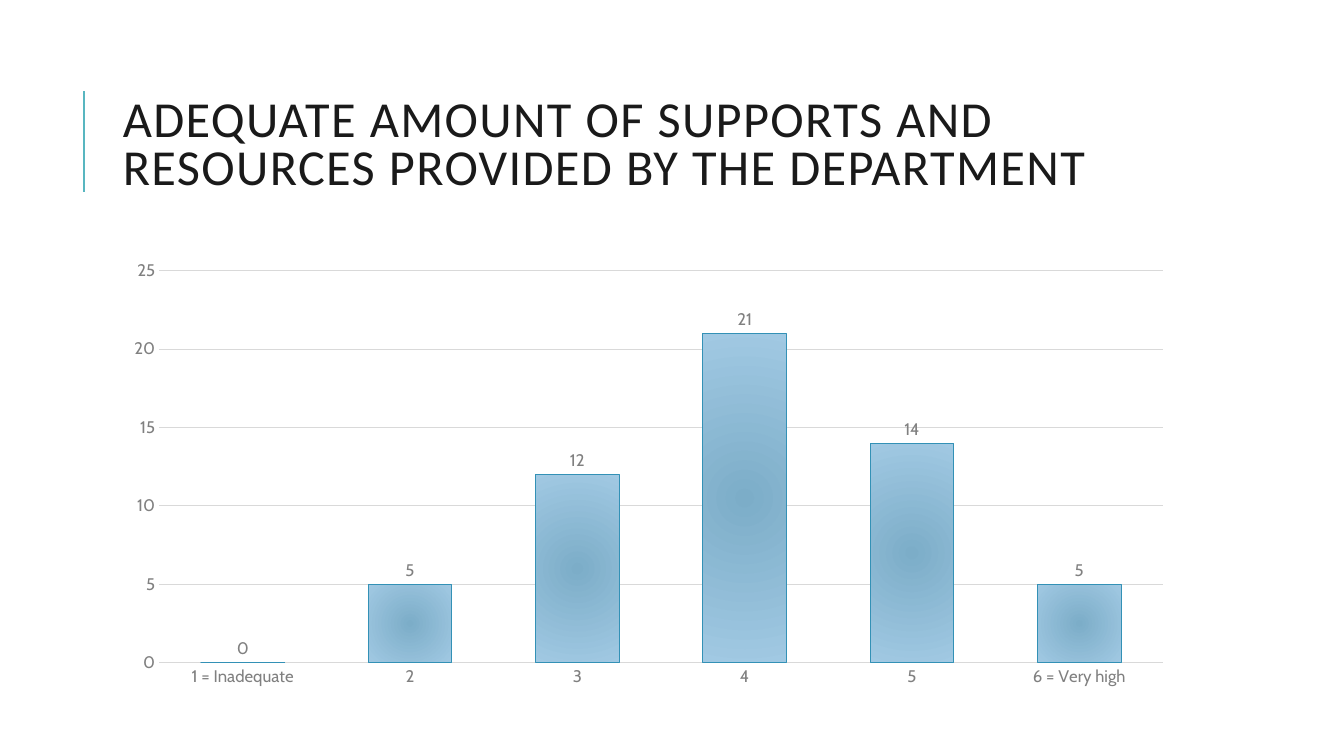
"""Build a slide with a column chart of ratings for departmental support."""
from lxml.etree import SubElement
from pptx import Presentation
from pptx.chart.data import CategoryChartData
from pptx.dml.color import RGBColor
from pptx.enum.chart import XL_CHART_TYPE, XL_LABEL_POSITION, XL_TICK_MARK
from pptx.enum.shapes import MSO_CONNECTOR
from pptx.enum.text import MSO_ANCHOR, PP_ALIGN
from pptx.oxml import parse_xml
from pptx.oxml.ns import nsdecls, qn
from pptx.util import Pt


def color(hex_code):
    return RGBColor.from_string(hex_code)


def style(target, values):
    for name, value in values.items():
        setattr(target, name, value)


presentation = Presentation()
style(presentation, {"slide_width": Pt(960), "slide_height": Pt(540)})
slide = presentation.slides.add_slide(presentation.slide_layouts[6])

accent_line = slide.shapes.add_connector(
    MSO_CONNECTOR.STRAIGHT, Pt(60), Pt(136.8), Pt(60), Pt(64.8)
)
accent_line.line.color.rgb = color("58B6C0")
accent_line.line.width = Pt(1.5)
SubElement(accent_line._element.spPr, qn("a:effectLst"))

title = slide.shapes.add_textbox(Pt(80.64), Pt(46.08), Pt(765.36), Pt(118.08))
style(title.text_frame, {"word_wrap": True, "vertical_anchor": MSO_ANCHOR.MIDDLE})
paragraph = title.text_frame.paragraphs[0]
style(paragraph, {"line_spacing": 0.8, "alignment": PP_ALIGN.LEFT})
run = paragraph.add_run()
run.text = "ADEQUATE AMOUNT OF SUPPORTS AND RESOURCES PROVIDED BY THE DEPARTMENT"
style(run.font, {"name": "Calibri", "size": Pt(36)})
run.font.color.rgb = color("1A1A1A")
run.font._element.set("spc", "100")

chart_data = CategoryChartData(number_format="General")
chart_data.categories = ["1 = Inadequate", "2", "3", "4", "5", "6 = Very high"]
chart_data.add_series("Series 1", [0, 5, 12, 21, 14, 5])
chart = slide.shapes.add_chart(
    XL_CHART_TYPE.COLUMN_CLUSTERED,
    Pt(80.64), Pt(180), Pt(765.36), Pt(316.8), chart_data,
).chart
style(chart, {"has_legend": False, "has_title": False})
style(chart.font, {"name": "Cabin", "size": Pt(10)})
chart.font.color.rgb = color("000000")

category_axis, value_axis = chart.category_axis, chart.value_axis
for axis in (category_axis, value_axis):
    style(axis, {
        "major_tick_mark": XL_TICK_MARK.NONE,
        "minor_tick_mark": XL_TICK_MARK.NONE,
    })
style(value_axis, {
    "minimum_scale": 0,
    "maximum_scale": 25,
    "major_unit": 5,
    "has_major_gridlines": True,
})
value_axis.format.line.fill.background()
for line in (category_axis.format.line, value_axis.major_gridlines.format.line):
    line.color.rgb = color("D9D9D9")
    line.width = Pt(0.75)

plot = chart.plots[0]
style(plot, {"gap_width": 100, "overlap": -24, "vary_by_categories": False})
series = plot.series[0]
labels = series.data_labels
style(labels, {"show_value": True, "position": XL_LABEL_POSITION.OUTSIDE_END})
for font in (category_axis.tick_labels.font, value_axis.tick_labels.font, labels.font):
    style(font, {"name": "Cabin", "size": Pt(12), "bold": False})
    font.color.rgb = color("808080")

series.format.line.color.rgb = color("3391B6")
series.format.line.width = Pt(0.75)
gradient = parse_xml(
    f'<a:gradFill {nsdecls("a")} rotWithShape="1"><a:gsLst>'
    '<a:gs pos="0"><a:srgbClr val="7CADC8"/></a:gs>'
    '<a:gs pos="100000"><a:srgbClr val="A1C9E3"/></a:gs></a:gsLst>'
    '<a:path path="circle">'
    '<a:fillToRect l="100000" t="100000" r="100000" b="100000"/>'
    '</a:path></a:gradFill>'
)
series._element.spPr.insert(0, gradient)

presentation.save("out.pptx")
